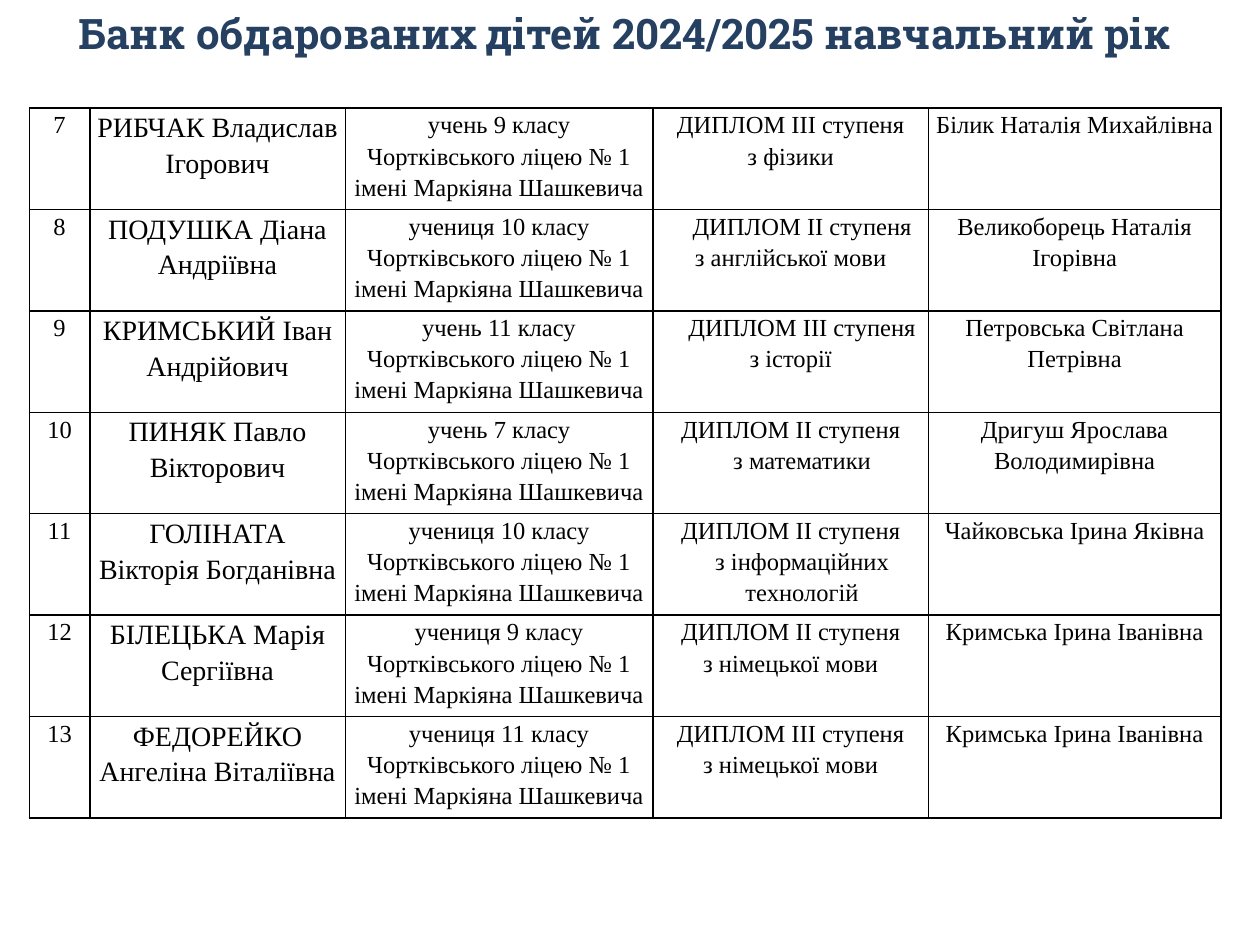
from pptx import Presentation
from pptx.dml.color import RGBColor
from pptx.enum.text import MSO_ANCHOR, PP_ALIGN
from pptx.oxml import parse_xml
from pptx.oxml.ns import nsdecls
from pptx.util import Cm, Pt

MID = PP_ALIGN.CENTER
TOP = MSO_ANCHOR.TOP
HUES = {"title": "254061", "ink": "000000", "cell": "FFFFFF"}
SERIF = "Times New Roman"
SLAB = "Roboto Slab"

# Content: number, pupil, form, award, subject, teacher
TITLE = "Банк обдарованих дітей 2024/2025 навчальний рік"
SCHOOL = "Чортківського ліцею № 1 імені Маркіяна Шашкевича"
PUPILS = [
    (7, "РИБЧАК Владислав Ігорович", "учень 9 класу",
     "ІІІ", "з фізики", "Білик Наталія Михайлівна"),
    (8, "ПОДУШКА Діана Андріївна", "учениця 10 класу",
     "ІІ", "з англійської мови", "Великоборець Наталія Ігорівна"),
    (9, "КРИМСЬКИЙ Іван Андрійович", "учень 11 класу",
     "ІІІ", "з історії", "Петровська Світлана Петрівна"),
    (10, "ПИНЯК Павло Вікторович", "учень 7 класу",
     "ІІ", "з математики", "Дригуш Ярослава Володимирівна"),
    (11, "ГОЛІНАТА Вікторія Богданівна", "учениця 10 класу",
     "ІІ", "з інформаційних технологій", "Чайковська Ірина Яківна"),
    (12, "БІЛЕЦЬКА Марія Сергіївна", "учениця 9 класу",
     "ІІ", "з німецької мови", "Кримська Ірина Іванівна"),
    (13, "ФЕДОРЕЙКО Ангеліна Віталіївна", "учениця 11 класу",
     "ІІІ", "з німецької мови", "Кримська Ірина Іванівна"),
]
# Indented award lines: pupil number -> line index
INDENT = {8: 0, 9: 0, 10: 1, 11: 1}
WIDTHS = [1.22, 5.15, 6.2, 5.56, 5.89]
ROW = 2.04


def write(frame, lines, font=SERIF, size=14, hue="ink", bold=False,
          space=1.15, indent=None):
    frame.word_wrap = True
    for i, line in enumerate(lines):
        para = frame.paragraphs[0] if i == 0 else frame.add_paragraph()
        para.alignment = MID
        para.line_spacing = space
        if i == indent:
            para._p.get_or_add_pPr().set("marL", str(Cm(0.46)))
        run = para.add_run()
        run.text = line
        run.font.name = font
        run.font.size = Pt(size)
        run.font.bold = bold
        run.font.color.rgb = RGBColor.from_string(HUES[hue])


def border(cell):
    props = cell._tc.get_or_add_tcPr()
    for i, side in enumerate(("lnL", "lnR", "lnT", "lnB")):
        props.insert(i, parse_xml(
            f'<a:{side} {nsdecls("a")} w="{Pt(1)}"><a:solidFill>'
            f'<a:srgbClr val="{HUES["ink"]}"/></a:solidFill></a:{side}>'))


deck = Presentation()
deck.slide_width, deck.slide_height = Cm(25.4), Cm(19.05)
slide = deck.slides.add_slide(deck.slide_layouts[6])

# Title
box = slide.shapes.add_textbox(Cm(0.2), Cm(0.03), Cm(24.8), Cm(1.27))
write(box.text_frame, [TITLE], font=SLAB, size=24, hue="title", bold=True,
      space=1)

# Table of pupils
table = slide.shapes.add_table(
    len(PUPILS), len(WIDTHS), Cm(0.59), Cm(2.18),
    Cm(sum(WIDTHS)), Cm(ROW * len(PUPILS))).table
table.first_row = table.horz_banding = False
for col, width in zip(table.columns, WIDTHS):
    col.width = Cm(width)
for r, (num, name, form, grade, topic, mentor) in enumerate(PUPILS):
    table.rows[r].height = Cm(ROW)
    texts = [[str(num)], [name], [f"{form} {SCHOOL}"],
             [f"ДИПЛОМ {grade} ступеня", topic], [mentor]]
    for c, lines in enumerate(texts):
        cell = table.cell(r, c)
        cell.margin_left = cell.margin_right = Cm(0.13)
        cell.margin_top = cell.margin_bottom = 0
        cell.vertical_anchor = TOP
        cell.fill.solid()
        cell.fill.fore_color.rgb = RGBColor.from_string(HUES["cell"])
        border(cell)
        write(cell.text_frame, lines, size=16 if c == 1 else 14,
              indent=INDENT.get(num) if c == 3 else None)

deck.save("out.pptx")
